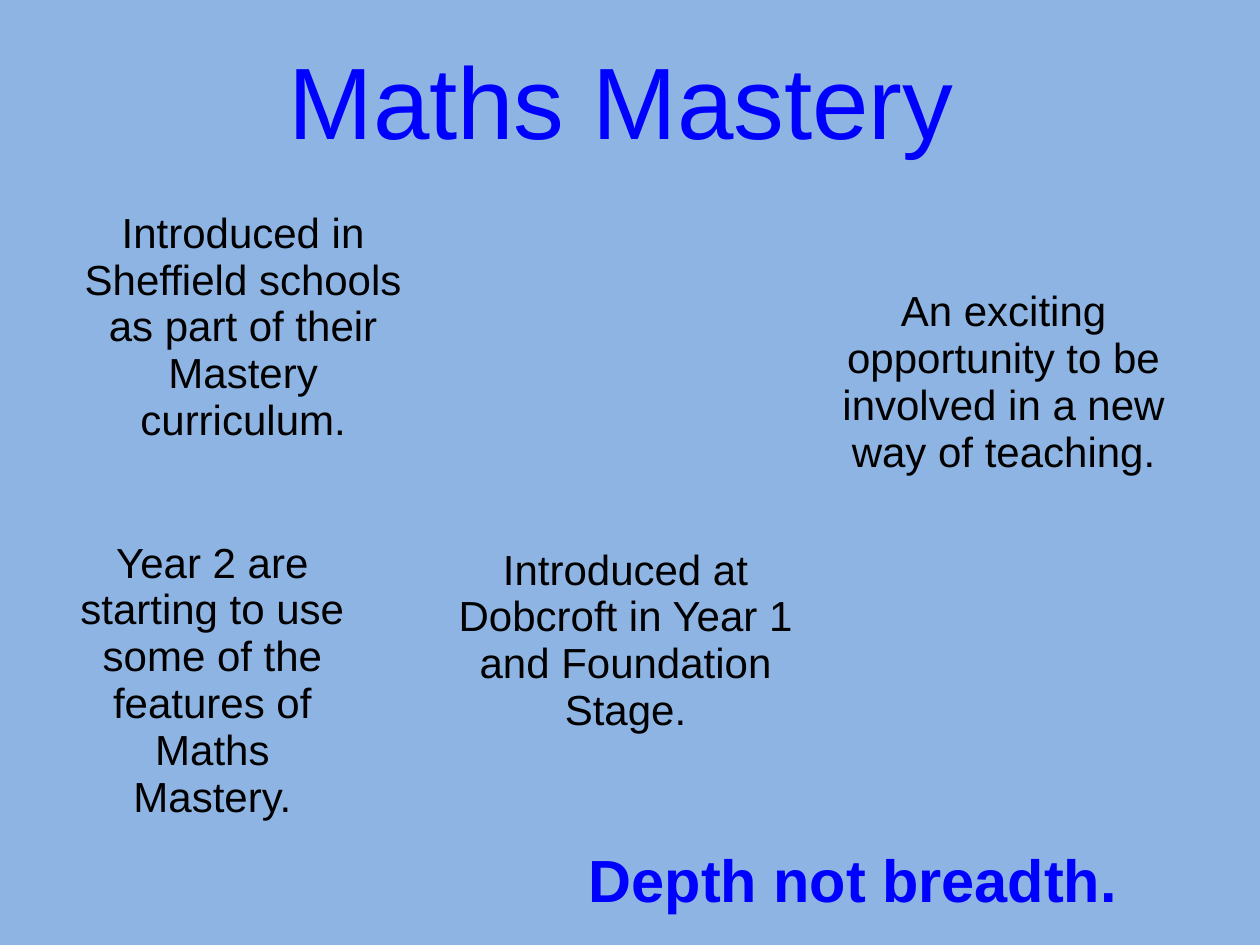
from pptx import Presentation, util as u
from pptx.dml.color import RGBColor
from pptx.enum import text
from pptx.oxml.ns import qn
from lxml import etree

BLUE, BLACK, SKY = "0000FF", "000000", "8EB4E3"

# left, top, width, height in cm
NOTES = [
    ((1.09, 4.11, 7.62, 4.14),
     "Introduced in Sheffield schools as part of their Mastery curriculum."),
    ((16.51, 5.54, 7.44, 4.34),
     "An exciting opportunity to be involved in a new way of teaching."),
    ((8.89, 10.31, 7.44, 5.21),
     "Introduced at Dobcroft in Year 1 and Foundation Stage."),
    ((1.27, 10.52, 6.02, 6.4),
     "Year 2 are starting to use some of the features of Maths Mastery."),
]


def paint(color, value):
    color.rgb = RGBColor.from_string(value)


def clear(cell):
    """Remove the borders and the fill of a cell."""
    props = cell._tc.get_or_add_tcPr()
    for side in ("a:lnL", "a:lnR", "a:lnT", "a:lnB"):
        line = etree.SubElement(props, qn(side))
        etree.SubElement(line, qn("a:noFill"))
    cell.fill.background()


def add_note(slide, box, words, size=24, color=BLACK, bold=False):
    """Add a one-cell table with centred text."""
    table = slide.shapes.add_table(1, 1, *map(u.Cm, box)).table
    table.first_row = table.horz_banding = False
    cell = table.cell(0, 0)
    clear(cell)
    cell.vertical_anchor = text.MSO_ANCHOR.MIDDLE
    cell.text = words
    para = cell.text_frame.paragraphs[0]
    para.alignment = text.PP_ALIGN.CENTER
    font = para.font
    font.name, font.size, font.bold = "Arial", u.Pt(size), bold
    paint(font.color, color)


def main():
    deck = Presentation()
    deck.slide_width, deck.slide_height = u.Cm(25.4), u.Cm(19.05)
    slide = deck.slides.add_slide(deck.slide_layouts[6])
    back = slide.background.fill
    back.solid()
    paint(back.fore_color, SKY)

    add_note(slide, (1.09, 0.74, 22.86, 2.72), "Maths Mastery", 58, BLUE)
    for box, words in NOTES:
        add_note(slide, box, words)
    add_note(slide, (9.5, 16.92, 15.39, 1.7), "Depth not breadth.",
             34, BLUE, True)
    deck.save("out.pptx")


if __name__ == "__main__":
    main()
